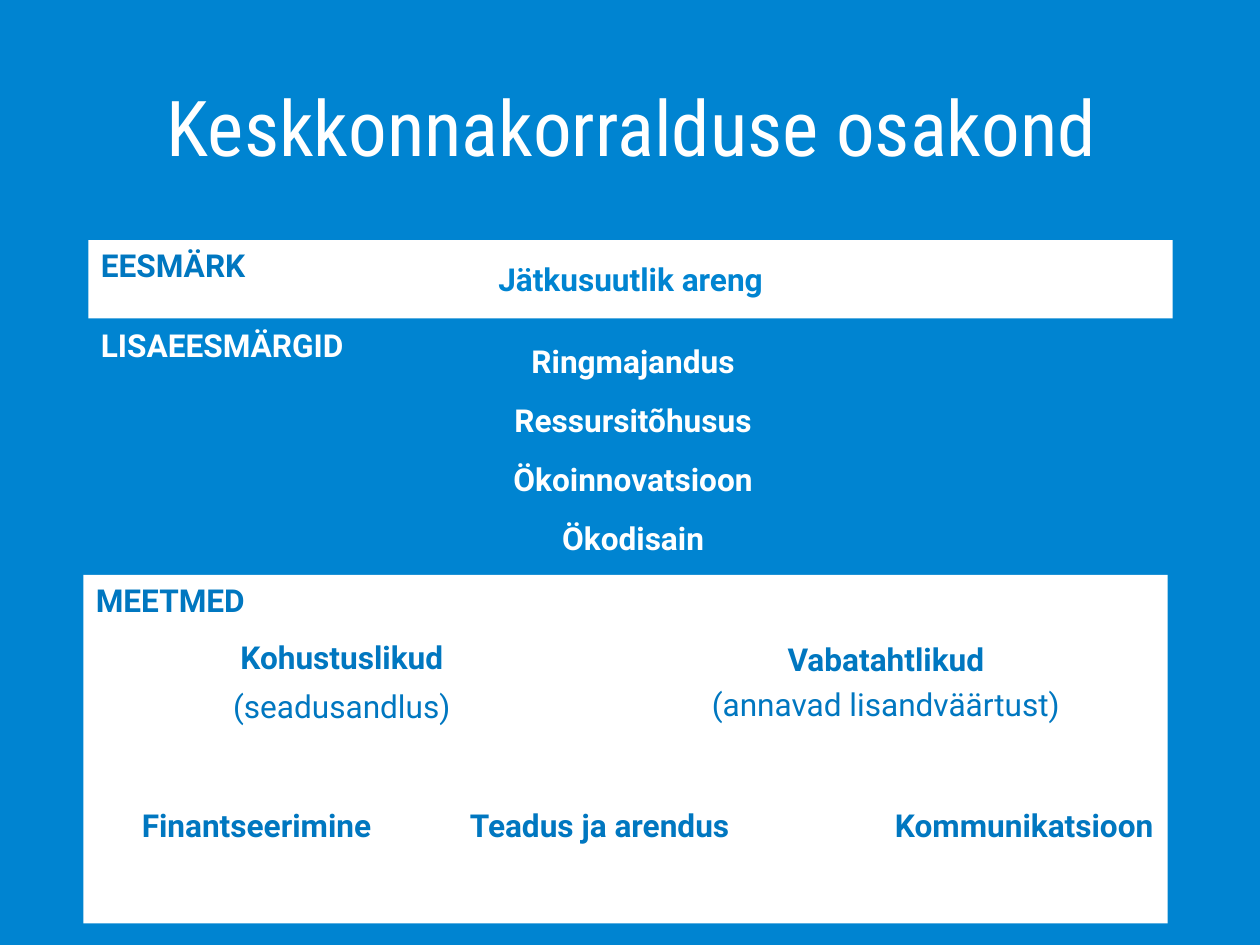
import pptx
from pptx.dml.color import RGBColor
from pptx.enum.shapes import MSO_SHAPE
from pptx.enum.text import MSO_ANCHOR, PP_ALIGN
from pptx.util import Inches, Pt

SKY = RGBColor(0x00, 0x84, 0xD1)
BLUE = RGBColor(0x00, 0x77, 0xC0)
WHITE = RGBColor(0xFF, 0xFF, 0xFF)

TITLE = "Keskkonnakorralduse osakond"
BAND_W = 8.58
BANDS = [
    ("EESMÄRK", 0.7, 1.9, 0.62, WHITE, BLUE),
    ("LISAEESMÄRGID", 0.7, 2.53, 2.05, SKY, WHITE),
    ("MEETMED", 0.66, 4.55, 2.76, WHITE, BLUE),
]
GOAL = ("Jätkusuutlik areng", 3.4, 2.01, 3.18)
SUBGOALS = ["Ringmajandus", "Ressursitõhusus", "Ökoinnovatsioon", "Ökodisain"]
SUBGOAL_X, SUBGOAL_Y, SUBGOAL_W, SUBGOAL_STEP = 3.86, 2.66, 2.3, 0.465
MEASURES = [
    ("Kohustuslikud", 1.79, 5.0, 1.83, True),
    ("(seadusandlus)", 1.62, 5.39, 2.17, False),
    ("Vabatahtlikud", 6.12, 5.02, 1.78, True),
    ("(annavad lisandväärtust)", 5.42, 5.37, 3.18, False),
    ("Finantseerimine", 1.01, 6.33, 2.04, True),
    ("Teadus ja arendus", 3.56, 6.33, 2.37, True),
    ("Kommunikatsioon", 6.97, 6.33, 2.27, True),
]


def write(tf, text, color, align, size=18, bold=True, name="Roboto"):
    p = tf.paragraphs[0]
    p.text = text
    p.alignment = align
    p.font.name = name
    p.font.size = Pt(size)
    p.font.bold = bold
    p.font.color.rgb = color
    return p


def add_band(s, text, x, y, h, fill, color):
    sp = s.shapes.add_shape(MSO_SHAPE.RECTANGLE, Inches(x), Inches(y), Inches(BAND_W), Inches(h))
    sp.shadow.inherit = False
    sp.fill.solid()
    sp.fill.fore_color.rgb = fill
    sp.line.fill.background()
    sp.text_frame.vertical_anchor = MSO_ANCHOR.TOP
    write(sp.text_frame, text, color, PP_ALIGN.LEFT)


def add_label(s, text, x, y, w, color, bold=True):
    tf = s.shapes.add_textbox(Inches(x), Inches(y), Inches(w), Inches(0.4)).text_frame
    tf.word_wrap = not bold or " " in text
    write(tf, text, color, PP_ALIGN.CENTER, bold=bold)


def main():
    prs = pptx.Presentation()
    prs.slide_width, prs.slide_height = Inches(9.97), Inches(7.48)
    s = prs.slides.add_slide(prs.slide_layouts[5])
    s.background.fill.solid()
    s.background.fill.fore_color.rgb = SKY

    title = s.shapes.title
    title.left, title.top = Inches(0.7), Inches(0.32)
    title.width, title.height = Inches(8.6), Inches(1.45)
    title.text_frame.vertical_anchor = MSO_ANCHOR.MIDDLE
    p = write(title.text_frame, TITLE, WHITE, PP_ALIGN.CENTER, 43.9, False, "Roboto Condensed")
    p.line_spacing = 0.9

    for band in BANDS:
        add_band(s, *band)
    add_label(s, *GOAL, SKY)
    for i, text in enumerate(SUBGOALS):
        add_label(s, text, SUBGOAL_X, SUBGOAL_Y + i * SUBGOAL_STEP, SUBGOAL_W, WHITE)
    for text, x, y, w, bold in MEASURES:
        add_label(s, text, x, y, w, BLUE, bold)

    prs.save("out.pptx")


if __name__ == "__main__":
    main()
